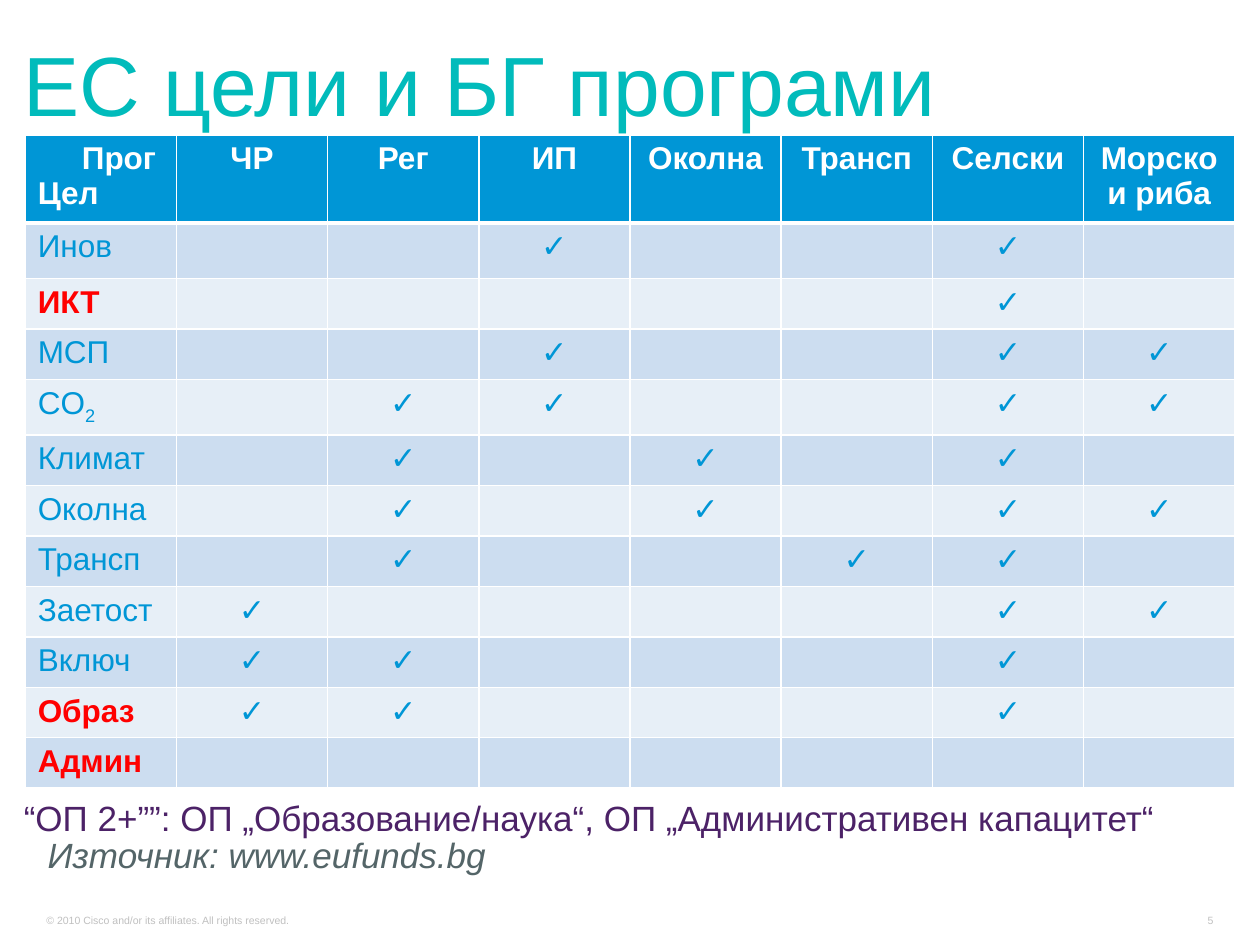
import pptx
import pptx.dml.color
import pptx.enum.text
import pptx.oxml
import pptx.oxml.ns
import pptx.util
from pptx.util import Inches

ALIGN = pptx.enum.text.PP_ALIGN
ANCHOR = pptx.enum.text.MSO_ANCHOR
BLUE, WHITE, RED, GRAY = "0096D6", "FFFFFF", "FF0000", "C0C0C0"
BANDS = ["CCDDF0", "E7EFF7"]

PROGRAMS = ["ЧР", "Рег", "ИП", "Околна", "Трансп", "Селски", "Морско\vи риба"]
GOALS = [
    ("Инов", ["ИП", "Селски"]),
    ("ИКТ", ["Селски"]),
    ("МСП", ["ИП", "Селски", "Морско\vи риба"]),
    ("CO2", ["Рег", "ИП", "Селски", "Морско\vи риба"]),
    ("Климат", ["Рег", "Околна", "Селски"]),
    ("Околна", ["Рег", "Околна", "Селски", "Морско\vи риба"]),
    ("Трансп", ["Рег", "Трансп", "Селски"]),
    ("Заетост", ["ЧР", "Селски", "Морско\vи риба"]),
    ("Включ", ["ЧР", "Рег", "Селски"]),
    ("Образ", ["ЧР", "Рег", "Селски"]),
    ("Админ", []),
]
KEY_GOALS = ["ИКТ", "Образ", "Админ"]
TALL_ROWS = {0: 0.68, 1: 0.44, 4: 0.44}


def color(value):
    return pptx.dml.color.RGBColor.from_string(value)


class SlideBuilder:
    font_name = "Arial"

    def __init__(self, page):
        self.page = page

    def style(self, para, size, ink, bold=False, italic=False, align=ALIGN.LEFT):
        para.alignment = align
        font = para.font
        font.name = self.font_name
        font.size = pptx.util.Pt(size)
        font.bold = bold
        font.italic = italic
        font.color.rgb = color(ink)

    def title(self, text, left, top, width, height):
        box = self.page.shapes.title
        box.left, box.top = Inches(left), Inches(top)
        box.width, box.height = Inches(width), Inches(height)
        frame = box.text_frame
        frame.auto_size = pptx.enum.text.MSO_AUTO_SIZE.NONE
        frame.vertical_anchor = ANCHOR.BOTTOM
        frame.text = text
        para = frame.paragraphs[0]
        para.line_spacing = 0.8
        self.style(para, 48, "01BBBB")

    def text(self, text, left, top, width, height, size, ink, italic=False,
             align=ALIGN.LEFT, anchor=ANCHOR.TOP, spacing=None, wrap=True):
        box = self.page.shapes.add_textbox(
            Inches(left), Inches(top), Inches(width), Inches(height))
        frame = box.text_frame
        frame.word_wrap = wrap
        frame.vertical_anchor = anchor
        frame.margin_top = frame.margin_bottom = Inches(0.04 if size < 10 else 0.05)
        para = frame.paragraphs[0]
        para.text = text
        para.line_spacing = spacing
        self.style(para, size, ink, italic=italic, align=align)

    def cell(self, cell, text, fill, ink, bold, align, bottom=1):
        self.borders(cell, bottom)
        cell.fill.solid()
        cell.fill.fore_color.rgb = color(fill)
        cell.text = text
        for para in cell.text_frame.paragraphs:
            self.style(para, 18, ink, bold=bold, align=align)

    def borders(self, cell, bottom):
        properties = cell._tc.get_or_add_tcPr()
        for side, points in (("L", 1), ("R", 1), ("T", 1), ("B", bottom)):
            properties.append(pptx.oxml.parse_xml(
                f'<a:ln{side} {pptx.oxml.ns.nsdecls("a")} w="{points * 12700}">'
                f'<a:solidFill><a:srgbClr val="{WHITE}"/></a:solidFill></a:ln{side}>'))

    def goal_table(self, left, top, column_width, row_height):
        columns, rows = len(PROGRAMS) + 1, len(GOALS) + 1
        heights = [TALL_ROWS.get(row, row_height) for row in range(rows)]
        table = self.page.shapes.add_table(
            rows, columns, Inches(left), Inches(top),
            Inches(column_width * columns), Inches(sum(heights))).table
        for column in table.columns:
            column.width = Inches(column_width)
        for row, height in zip(table.rows, heights):
            row.height = Inches(height)

        corner = table.cell(0, 0)
        self.cell(corner, "Прог\nЦел", BLUE, WHITE, True, ALIGN.LEFT, 3)
        indent = corner.text_frame.paragraphs[0]._p.get_or_add_pPr()
        indent.set("marL", str(Inches(0.35)))
        for column, program in enumerate(PROGRAMS, 1):
            self.cell(table.cell(0, column), program, BLUE, WHITE, True, ALIGN.CENTER, 3)

        for row, (goal, funded) in enumerate(GOALS, 1):
            band = BANDS[(row - 1) % 2]
            key = goal in KEY_GOALS
            label = table.cell(row, 0)
            self.cell(label, goal, band, RED if key else BLUE, key, ALIGN.LEFT)
            if goal == "CO2":
                para = label.text_frame.paragraphs[0]
                para.runs[0].text = "CO"
                span = para.add_run()
                span.text = "2"
                span.font._element.set("baseline", "-25000")
            for column, program in enumerate(PROGRAMS, 1):
                mark = "✓" if program in funded else ""
                self.cell(table.cell(row, column), mark, band, BLUE, True, ALIGN.CENTER)


def main():
    deck = pptx.Presentation()
    deck.slide_width, deck.slide_height = Inches(10), Inches(7.5)
    builder = SlideBuilder(deck.slides.add_slide(deck.slide_layouts[5]))
    builder.text("© 2010 Cisco and/or its affiliates. All rights reserved.",
                 0.27, 7.2, 3.74, 0.19, 6, GRAY, anchor=ANCHOR.BOTTOM)
    builder.text("5", 9.45, 7.2, 0.28, 0.19, 6, GRAY,
                 align=ALIGN.RIGHT, anchor=ANCHOR.BOTTOM, wrap=False)
    builder.title("ЕС цели и БГ програми", 0.09, 0.15, 9.91, 0.95)
    builder.goal_table(0.2, 1.07, 1.2, 0.4)
    builder.text("“ОП 2+””: ОП „Образование/наука“, ОП „Административен капацитет“",
                 0.09, 6.3, 9.91, 0.42, 20, "4C2267", spacing=0.95)
    builder.text("Източник: www.eufunds.bg", 0.28, 6.59, 8.82, 0.38, 20, "546568",
                 italic=True, spacing=0.95)
    deck.save("out.pptx")


if __name__ == "__main__":
    main()
